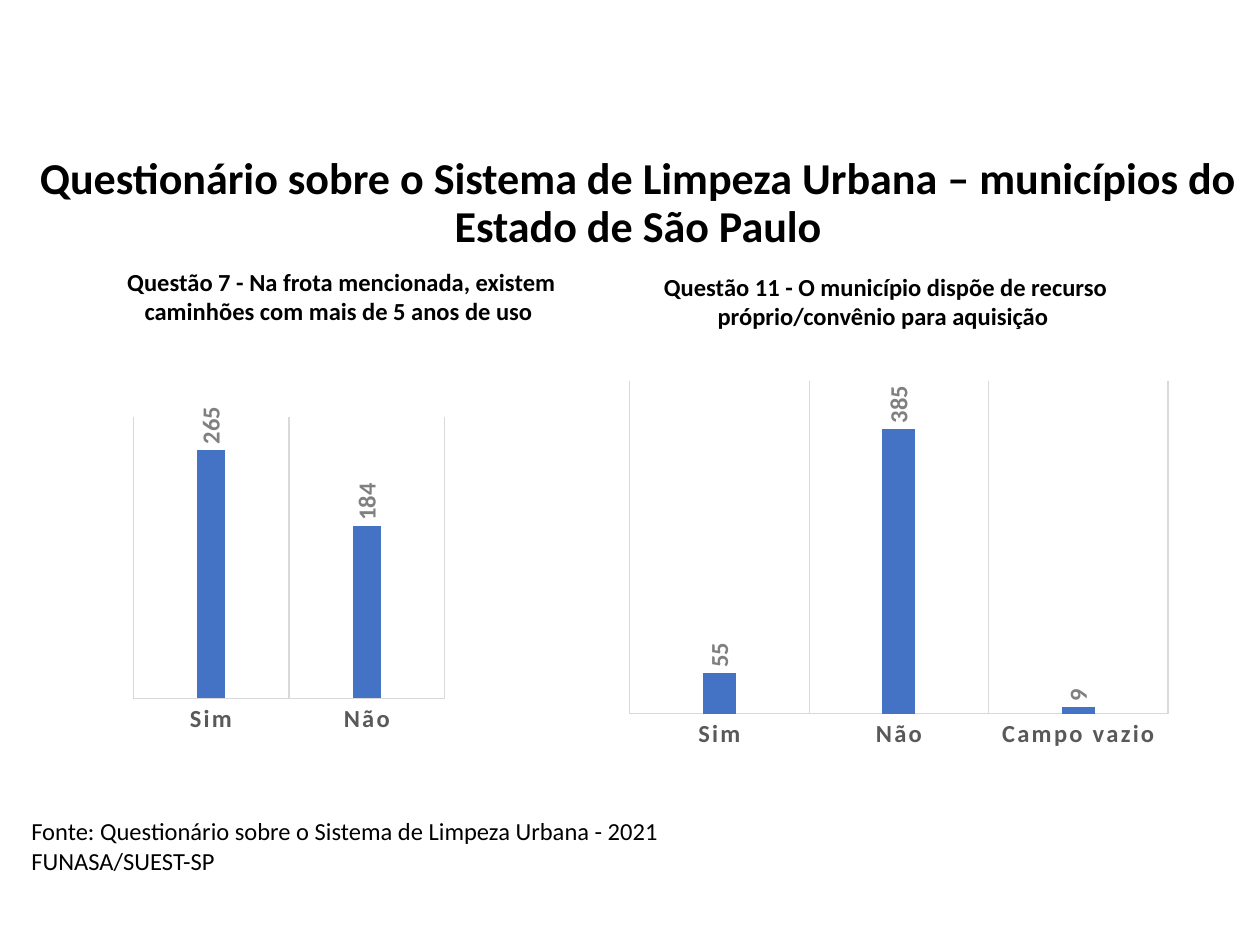
from lxml import etree
from pptx import Presentation
from pptx.chart.data import CategoryChartData
from pptx.dml.color import RGBColor
from pptx.enum.chart import XL_CHART_TYPE as ChartType, XL_LABEL_POSITION as LabelPos, XL_TICK_MARK as Tick
from pptx.enum.text import MSO_ANCHOR as Anchor, MSO_AUTO_SIZE as AutoSize, PP_ALIGN as Align
from pptx.oxml.ns import qn
from pptx.util import Inches, Pt


def style(font, color, size=14, bold=True):
    font.name = "Calibri"
    font.size = Pt(size)
    font.bold = bold
    font.color.rgb = RGBColor.from_string(color)


def write(frame, lines, align, size=14, bold=True):
    frame.word_wrap = True
    for i, line in enumerate(lines):
        paragraph = frame.paragraphs[0] if i == 0 else frame.add_paragraph()
        paragraph.alignment = align
        run = paragraph.add_run()
        run.text = line
        style(run.font, "000000", size, bold)


deck = Presentation()
deck.slide_width, deck.slide_height = Inches(10), Inches(7.5)
slide = deck.slides.add_slide(deck.slide_layouts[5])

heading = slide.shapes.title
heading.left, heading.top, heading.width, heading.height = map(Inches, (0.14, 1.34, 9.85, 0.56))
write(heading.text_frame,
      ["Questionário sobre o Sistema de Limpeza Urbana – municípios do Estado de São Paulo"],
      Align.CENTER, 25.2)
heading.text_frame.auto_size = AutoSize.NONE
heading.text_frame.vertical_anchor = Anchor.MIDDLE
heading.text_frame.paragraphs[0].line_spacing = 0.9

questions = [
    ("Questão 7 - Na frota mencionada, existem caminhões com mais de 5 anos de uso ",
     (0.74, 2.07, 3.94, 0.57), (0.84, 2.35, 4.34, 3.55), (0.05, 0.27, 0.57, 0.63),
     {"Sim": 265, "Não": 184}, 300),
    ("Questão 11 - O município dispõe de recurso próprio/convênio para aquisição ",
     (5.06, 2.11, 3.94, 0.57), (4.91, 2.96, 4.45, 3.04), (0.02, 0.02, 0.96, 0.87),
     {"Sim": 55, "Não": 385, "Campo vazio": 9}, 450),
]

for question, question_box, chart_box, plot_box, answers, top_value in questions:
    data = CategoryChartData(number_format="###0")
    data.categories = list(answers)
    data.add_series("Series 1", list(answers.values()))
    chart = slide.shapes.add_chart(ChartType.COLUMN_CLUSTERED, *map(Inches, chart_box), data).chart
    chart.has_title = chart.has_legend = False
    style(chart.font, "000000")

    plot_area = chart.plots[0]._element.getparent()
    for old_layout in plot_area.findall(qn("c:layout")):
        plot_area.remove(old_layout)
    layout = etree.Element(qn("c:layout"))
    manual = etree.SubElement(layout, qn("c:manualLayout"))
    settings = [("layoutTarget", "inner"), ("xMode", "edge"), ("yMode", "edge"), *zip("xywh", plot_box)]
    for tag, value in settings:
        etree.SubElement(manual, qn(f"c:{tag}")).set("val", str(value))
    plot_area.insert(0, layout)

    answer_axis, count_axis = chart.category_axis, chart.value_axis
    count_axis.minimum_scale, count_axis.maximum_scale = 0, top_value
    count_axis.has_major_gridlines = False
    count_axis.visible = False
    answer_axis.has_major_gridlines = True
    answer_axis.major_tick_mark = answer_axis.minor_tick_mark = Tick.NONE
    for line in (answer_axis.format.line, answer_axis.major_gridlines.format.line):
        line.color.rgb = RGBColor.from_string("D9D9D9")
        line.width = Pt(0.75)
    style(answer_axis.tick_labels.font, "595959")
    answer_axis._element.find(".//" + qn("a:defRPr")).set("spc", "120")

    bars = chart.plots[0]
    bars.gap_width, bars.overlap = 444, -90
    bars.vary_by_categories = False
    counts = bars.series[0]
    counts.format.fill.solid()
    counts.format.fill.fore_color.rgb = RGBColor.from_string("4472C4")
    labels = counts.data_labels
    labels.show_value = True
    labels.position = LabelPos.OUTSIDE_END
    labels.number_format, labels.number_format_is_linked = "###0", False
    style(labels.font, "808080")
    turn = labels._element.find(".//" + qn("a:bodyPr"))
    turn.set("rot", "-5400000")
    turn.set("vert", "horz")

    caption = slide.shapes.add_textbox(*map(Inches, question_box))
    write(caption.text_frame, [question], Align.CENTER)

credit = slide.shapes.add_textbox(*map(Inches, (0.15, 6.43, 7.68, 0.57)))
write(credit.text_frame,
      ["Fonte: Questionário sobre o Sistema de Limpeza Urbana - 2021", "FUNASA/SUEST-SP"],
      Align.LEFT, bold=False)

deck.save("out.pptx")
